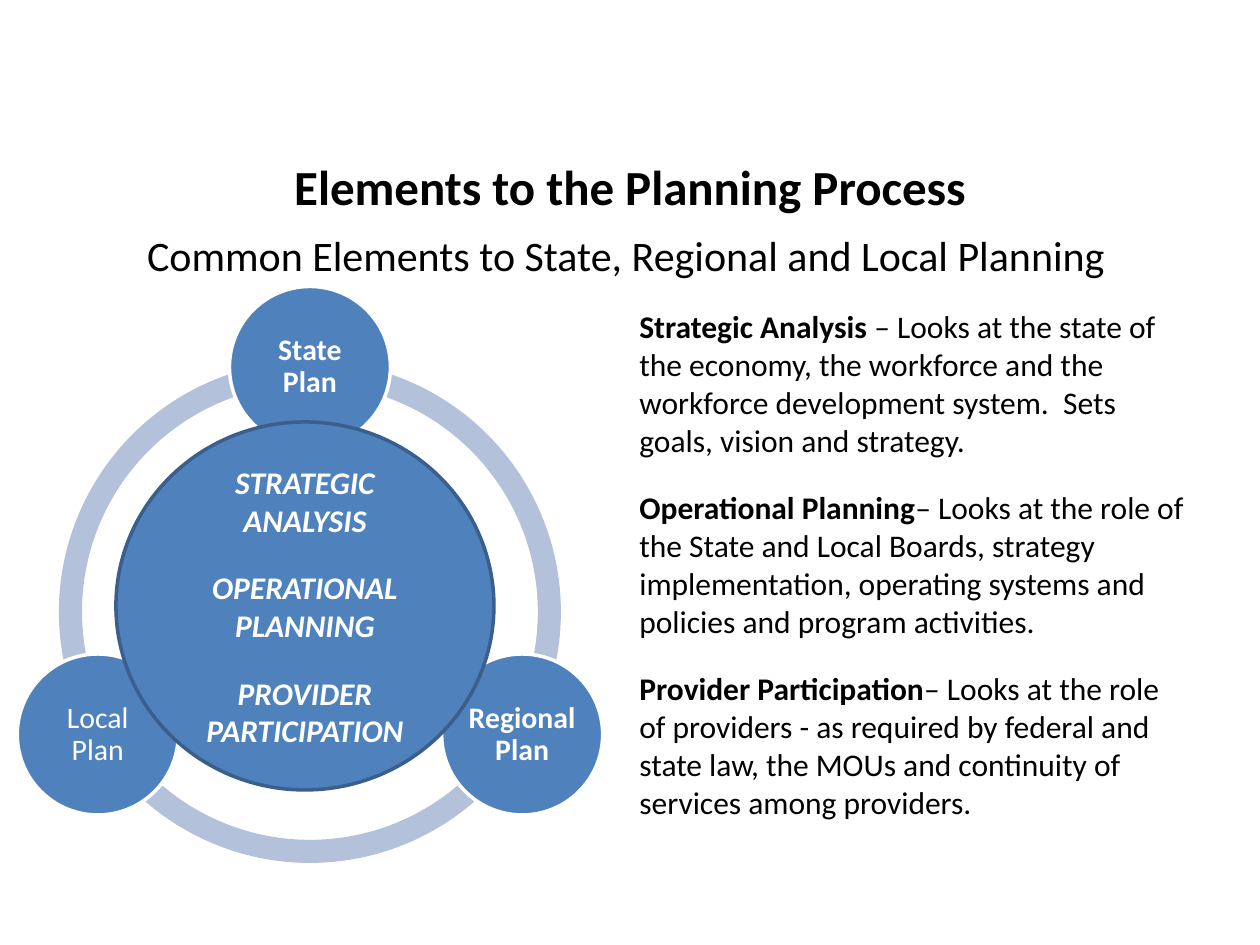
import math
import pptx
import pptx.util
import pptx.dml.color
import pptx.enum.shapes
import pptx.enum.text

SCALE = 914400 / 126  # EMU per px
BLACK = pptx.dml.color.RGBColor(0x00, 0x00, 0x00)
WHITE = pptx.dml.color.RGBColor(0xFF, 0xFF, 0xFF)
BLUE = pptx.dml.color.RGBColor(0x4F, 0x81, 0xBD)
DARK_BLUE = pptx.dml.color.RGBColor(0x3A, 0x5F, 0x8C)
PALE_BLUE = pptx.dml.color.RGBColor(0xB3, 0xC1, 0xDB)
CENTER = pptx.enum.text.PP_ALIGN.CENTER
SHAPES = pptx.enum.shapes.MSO_SHAPE

deck = pptx.Presentation()
deck.slide_width = round(1260 * SCALE)
deck.slide_height = round(945 * SCALE)
page = deck.slides.add_slide(deck.slide_layouts[6])


def add_shape(kind, left, top, width, height, fill, line=None):
    shape = page.shapes.add_shape(kind, *(round(v * SCALE) for v in (left, top, width, height)))
    shape.shadow.inherit = False
    shape.fill.solid()
    shape.fill.fore_color.rgb = fill
    if line is None:
        shape.line.fill.background()
    else:
        shape.line.color.rgb = line
        shape.line.width = pptx.util.Pt(2)
    shape.text_frame.word_wrap = True
    shape.text_frame.vertical_anchor = pptx.enum.text.MSO_ANCHOR.MIDDLE
    return shape


def add_text(left, top, width, height, spans, size, align=None, wrap=True):
    box = page.shapes.add_textbox(*(round(v * SCALE) for v in (left, top, width, height)))
    box.text_frame.word_wrap = wrap
    box.text_frame.auto_size = pptx.enum.text.MSO_AUTO_SIZE.SHAPE_TO_FIT_TEXT
    para = box.text_frame.paragraphs[0]
    para.alignment = align
    para.font.name = "Calibri"
    para.font.size = pptx.util.Pt(size)
    para.font.color.rgb = BLACK
    for text, bold in spans:
        span = para.add_run()
        span.text = text
        span.font.bold = bold


# Headings
add_text(130, 223, 992, 63, [("Common Elements to State, Regional and Local Planning", False)],
         24, CENTER, wrap=False)
add_text(84, 150, 1092, 72, [("Elements to the Planning Process", True)], 28, CENTER)

# Ring of three arcs
CENTER_X, CENTER_Y, RING = 310, 612, 502
for start, end in [(90, 162), (18, 90), (162, 18)]:
    arc = add_shape(SHAPES.BLOCK_ARC, CENTER_X - RING / 2, CENTER_Y - RING / 2, RING, RING, PALE_BLUE)
    arc.adjustments[0] = start * 0.6  # 60000ths of a degree, over 100000
    arc.adjustments[1] = end * 0.6
    arc.adjustments[2] = 0.046

# Plan circles, a third of a turn apart
ORBIT, CIRCLE = 245, 161
for angle, label, bold in [(-90, "State Plan", True), (30, "Regional Plan", True), (150, "Local Plan", False)]:
    x = CENTER_X + ORBIT * math.cos(math.radians(angle))
    y = CENTER_Y + ORBIT * math.sin(math.radians(angle))
    circle = add_shape(SHAPES.OVAL, x - CIRCLE / 2, y - CIRCLE / 2, CIRCLE, CIRCLE, BLUE, WHITE)
    frame = circle.text_frame
    frame.margin_left = frame.margin_right = frame.margin_top = frame.margin_bottom = round(2 * SCALE)
    para = frame.paragraphs[0]
    para.text = label
    para.alignment = CENTER
    para.line_spacing = 0.9
    para.font.name = "Calibri"
    para.font.size = pptx.util.Pt(17)
    para.font.bold = bold
    para.font.color.rgb = WHITE

# Shared elements in the middle
hub = add_shape(SHAPES.OVAL, 116, 422, 378, 368, BLUE, DARK_BLUE)
elements = [("STRATEGIC ANALYSIS", 0), ("OPERATIONAL PLANNING", 17), ("PROVIDER", 17), ("PARTICIPATION", 0)]
for index, (label, gap) in enumerate(elements):
    para = hub.text_frame.add_paragraph() if index else hub.text_frame.paragraphs[0]
    para.text = label
    para.alignment = CENTER
    para.space_before = pptx.util.Pt(gap)
    para.font.name = "Calibri"
    para.font.size = pptx.util.Pt(18)
    para.font.bold = True
    para.font.italic = True
    para.font.color.rgb = WHITE

# Explanations
explanations = [
    ("Strategic Analysis ", "– Looks at the state of the economy, the workforce and the workforce "
     "development system.  Sets goals, vision and strategy."),
    ("Operational Planning", "– Looks at the role of the State and Local Boards, strategy "
     "implementation, operating systems and policies and program activities."),
    ("Provider Participation", "– Looks at the role of providers - as required by federal and state "
     "law, the MOUs and continuity of services among providers."),
]
for row, (term, meaning) in enumerate(explanations):
    add_text(627, 301 + 181 * row, 577, 165, [(term, True), (meaning, False)], 18)

deck.save("out.pptx")
